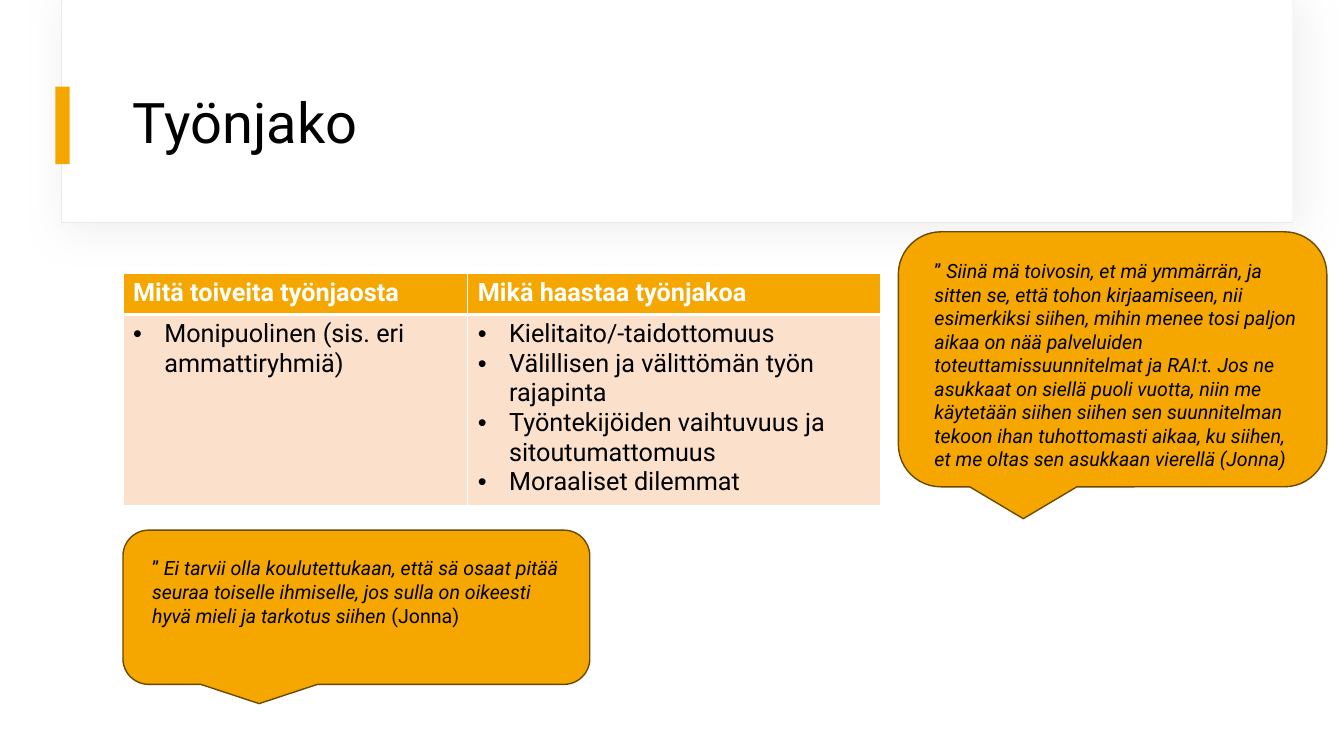
from lxml.etree import SubElement
from pptx import Presentation
from pptx.dml.color import RGBColor
from pptx.enum.shapes import MSO_SHAPE as Shape
from pptx.enum.text import MSO_ANCHOR as Anchor
from pptx.oxml import parse_xml
from pptx.oxml.ns import nsdecls, qn
from pptx.util import Inches, Pt

GOLD, BROWN, PEACH, WHITE, BLACK = "F5A700", "6B4900", "FBE1CC", "FFFFFF", "000000"
TITLE = "Työnjako"
HEADS = ["Mitä toiveita työnjaosta", "Mikä haastaa työnjakoa"]
LISTS = [
    ["Monipuolinen (sis. eri ammattiryhmiä)"],
    ["Kielitaito/-taidottomuus", "Välillisen ja välittömän työn rajapinta",
     "Työntekijöiden vaihtuvuus ja sitoutumattomuus", "Moraaliset dilemmat"],
]
PANELS = [
    ((0.61, 0, 12.21, 2.21), WHITE, "E9E9E9", 0.75),
    ((0.62, 0, 12.2, 2.2), WHITE, None, 0),
    ((0.55, 0.86, 0.14, 0.77), GOLD, None, 0),
]
QUOTES = [
    ((8.91, 2.3, 4.25, 2.53), (9.17, 2.52, 3.83, 2.52), [
        ("”", False),
        (" Siinä mä toivosin, et mä ymmärrän, ja sitten se, että tohon kirjaamiseen, nii "
         "esimerkiksi siihen, mihin menee tosi paljon aikaa on nää palveluiden "
         "toteuttamissuunnitelmat ja RAI:t. Jos ne asukkaat on siellä puoli vuotta, niin me "
         "käytetään siihen siihen sen suunnitelman tekoon ihan tuhottomasti aikaa, ku siihen, "
         "et me oltas sen asukkaan vierellä (Jonna)", True)]),
    ((1.22, 5.26, 4.63, 1.53), (1.41, 5.47, 4.24, 1.11), [
        ("”", False),
        (" Ei tarvii olla koulutettukaan, että sä osaat pitää seuraa toiselle ihmiselle, "
         "jos sulla on oikeesti hyvä mieli ja tarkotus siihen ", True),
        ("(Jonna)", False)]),
]
COLS, ROWS = [3.42, 4.09], [0.41, 1.85]

deck = Presentation()
deck.slide_width, deck.slide_height = Inches(13.33), Inches(7.5)
slide = deck.slides.add_slide(deck.slide_layouts[6])


def color(code):
    return RGBColor.from_string(code)


def box(kind, at, fill, line, width):
    shape = slide.shapes.add_shape(kind, *map(Inches, at))
    shape.shadow.inherit = False
    shape.fill.solid()
    shape.fill.fore_color.rgb = color(fill)
    if line:
        shape.line.color.rgb = color(line)
        shape.line.width = Pt(width)
    else:
        shape.line.fill.background()
    return shape


def write(para, text, size, tint=BLACK, **style):
    run = para.add_run()
    run.text = text
    look = {"name": "Roboto", "size": Pt(size), **style}
    for key, value in look.items():
        setattr(run.font, key, value)
    run.font.color.rgb = color(tint)


def label(at):
    frame = slide.shapes.add_textbox(*map(Inches, at)).text_frame
    frame.word_wrap = True
    return frame


def bullet(para):
    props = para._p.get_or_add_pPr()
    props.set("marL", str(Inches(0.31)))
    props.set("indent", str(Inches(-0.31)))
    SubElement(props, qn("a:buFont"), typeface="Arial")
    SubElement(props, qn("a:buChar"), char="•")


def border(cell, base):
    props = cell._tc.get_or_add_tcPr()
    for spot, (side, width) in enumerate(zip("LRTB", (1, 1, 1, base))):
        props.insert(spot, parse_xml(
            f'<a:ln{side} {nsdecls("a")} w="{Pt(width)}"><a:solidFill>'
            f'<a:srgbClr val="{WHITE}"/></a:solidFill></a:ln{side}>'))


def shade(shape):
    effects = shape._element.spPr.find(qn("a:effectLst"))
    effects.append(parse_xml(
        f'<a:outerShdw {nsdecls("a")} blurRad="{Pt(30)}" dist="{Pt(5)}" dir="2220000" '
        'algn="tl" rotWithShape="0"><a:srgbClr val="D9D9D9"><a:alpha val="45000"/>'
        '</a:srgbClr></a:outerShdw>'))


panels = [box(Shape.RECTANGLE, *panel) for panel in PANELS]
shade(panels[0])

title = label((1.22, 0.6, 11.12, 1.29))
title.vertical_anchor = Anchor.MIDDLE
title.paragraphs[0].line_spacing = 0.9
write(title.paragraphs[0], TITLE, 40)

table = slide.shapes.add_table(
    2, 2, *map(Inches, (1.22, 2.71, sum(COLS), sum(ROWS)))).table
for row, high in zip(table.rows, ROWS):
    row.height = Inches(high)
for c, (wide, head, items) in enumerate(zip(COLS, HEADS, LISTS)):
    table.columns[c].width = Inches(wide)
    for r, (lines, fill, tint, base) in enumerate(
            [([head], GOLD, WHITE, 3), (items, PEACH, BLACK, 1)]):
        cell = table.cell(r, c)
        cell.fill.solid()
        cell.fill.fore_color.rgb = color(fill)
        border(cell, base)
        frame = cell.text_frame
        for i, text in enumerate(lines):
            para = frame.add_paragraph() if i else frame.paragraphs[0]
            if r:
                bullet(para)
            write(para, text, 18, tint, bold=r == 0)

for bubble, area, runs in QUOTES:
    box(Shape.ROUNDED_RECTANGULAR_CALLOUT, bubble, GOLD, BROWN, 1)
    para = label(area).paragraphs[0]
    for text, slant in runs:
        write(para, text, 14, italic=slant)

deck.save("out.pptx")
